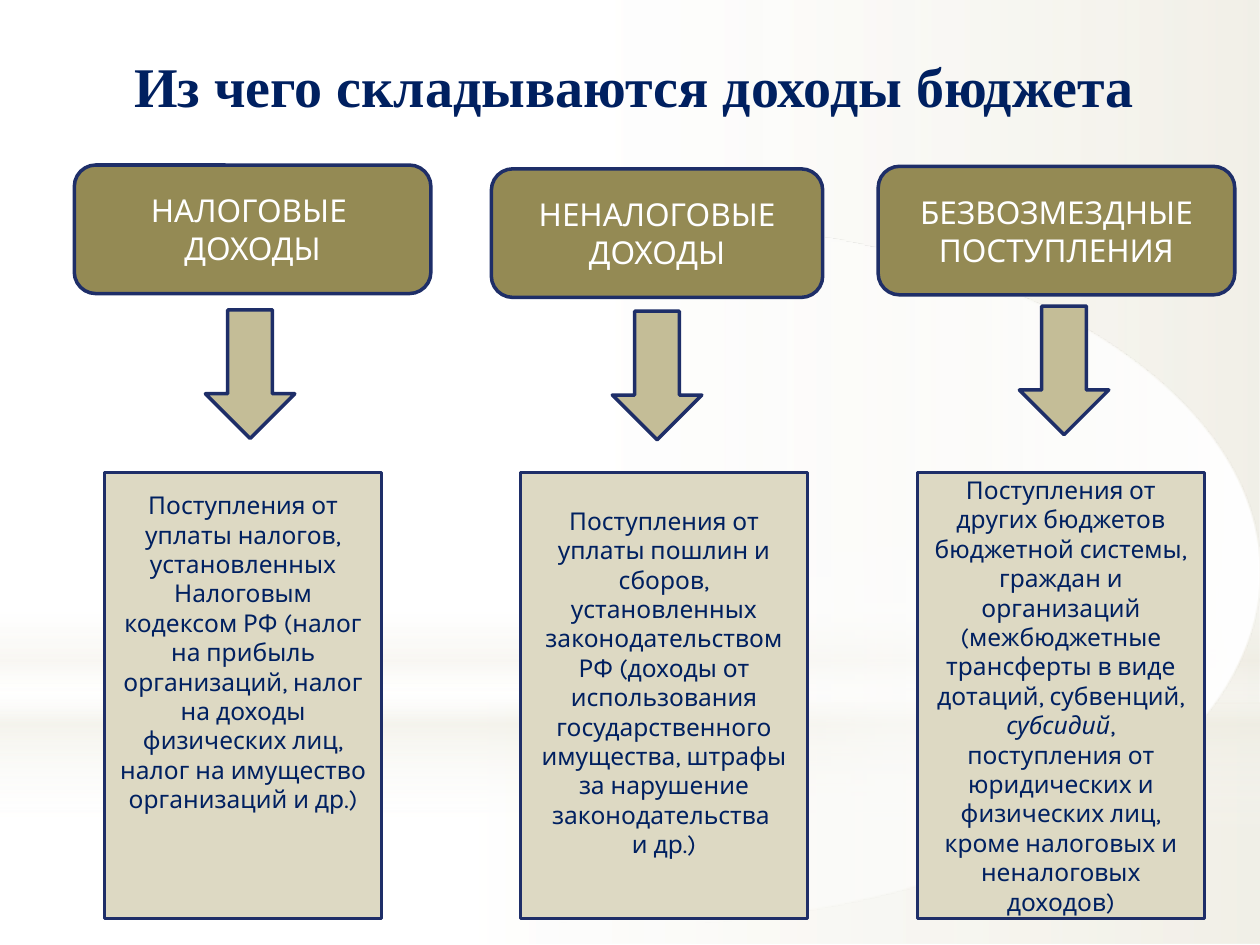
from pptx import Presentation
from pptx.dml.color import RGBColor
from pptx.enum.shapes import MSO_SHAPE
from pptx.enum.text import MSO_ANCHOR, PP_ALIGN
from pptx.oxml import parse_xml
from pptx.oxml.ns import nsdecls
from pptx.util import Inches, Pt

RECT, ROUND = MSO_SHAPE.RECTANGLE, MSO_SHAPE.ROUNDED_RECTANGLE
ARROW, OVAL = MSO_SHAPE.DOWN_ARROW, MSO_SHAPE.OVAL
CENTER, RIGHT, MIDDLE = PP_ALIGN.CENTER, PP_ALIGN.RIGHT, MSO_ANCHOR.MIDDLE

WHITE = RGBColor(0xFF, 0xFF, 0xFF)
CREAM = RGBColor(0xEE, 0xEC, 0xE1)
NAVY = RGBColor(0x00, 0x20, 0x60)
OUTLINE = RGBColor(0x1E, 0x2E, 0x68)
OLIVE = RGBColor(0x94, 0x8A, 0x54)
TAN = RGBColor(0xC4, 0xBD, 0x97)
SAND = RGBColor(0xDD, 0xD9, 0xC3)

prs = Presentation()
prs.slide_width, prs.slide_height = Inches(10), Inches(7.5)
s = prs.slides.add_slide(prs.slide_layouts[6])


def add_box(kind, x, y, w, h, fill):
    sp = s.shapes.add_shape(kind, Inches(x), Inches(y), Inches(w), Inches(h))
    sp.shadow.inherit = False
    sp.fill.solid()
    sp.fill.fore_color.rgb = fill
    sp.line.color.rgb = OUTLINE
    sp.line.width = Pt(2)
    return sp


def add_text(tf, paragraphs, size, color, font, align=CENTER, bold=None):
    """Each paragraph is a list of (text, italic) runs."""
    tf.word_wrap = True
    for i, runs in enumerate(paragraphs):
        p = tf.paragraphs[0] if i == 0 else tf.add_paragraph()
        p.alignment = align
        for text, italic in runs:
            r = p.add_run()
            r.text = text
            r.font.name, r.font.size = font, Pt(size)
            r.font.bold, r.font.italic = bold, italic
            r.font.color.rgb = color


# Background: gradient stops are (position %, colour, opacity %)
backdrop = [
    (RECT, 5.58, 1.91, 0, [(0, WHITE, 91), (37, WHITE, 76), (100, CREAM, 79)]),
    (RECT, 0, 5.58, 0, [(0, WHITE, 89), (48, WHITE, 62), (100, CREAM, 79)]),
    (RECT, 4.12, 2.5, 90, [(0, WHITE, 0), (29, WHITE, 30), (45, CREAM, 40),
                           (55, WHITE, 26), (65, CREAM, 60), (100, WHITE, 0)]),
    (OVAL, 1.75, 5.58, 180, [(0, WHITE, 100), (56, WHITE, 0)]),
]
for kind, y, h, angle, stops in backdrop:
    sp = s.shapes.add_shape(kind, 0, Inches(y), Inches(10), Inches(h))
    sp.shadow.inherit = False
    sp.line.fill.background()
    gs = "".join(
        f'<a:gs pos="{pos * 1000}"><a:srgbClr val="{color}">'
        f'<a:alpha val="{alpha * 1000}"/></a:srgbClr></a:gs>'
        for pos, color, alpha in stops)
    sp.line._get_or_add_ln().addprevious(parse_xml(
        f'<a:gradFill {nsdecls("a")} rotWithShape="1"><a:gsLst>{gs}</a:gsLst>'
        f'<a:lin ang="{angle * 60000}" scaled="0"/></a:gradFill>'))

# Title
sp = s.shapes.add_textbox(Inches(0.9), Inches(0.36), Inches(8.2), Inches(0.69))
add_text(sp.text_frame, [[("Из чего складываются доходы бюджета", None)]],
         32, NAVY, "Times New Roman", RIGHT, True)

# Columns: header (x, y, w, lines), arrow (x, y),
# description (x, w, bottom inset, paragraphs)
columns = [
    ((0.59, 1.31, 2.83, ["НАЛОГОВЫЕ ", "ДОХОДЫ"]), (1.63, 2.46),
     (0.83, 2.2, 0.74, [[(
         "Поступления от уплаты налогов, установленных Налоговым кодексом РФ "
         "(налог на прибыль организаций, налог на доходы физических лиц, "
         "налог на имущество организаций и др.)", None)]])),
    ((3.9, 1.34, 2.63, ["НЕНАЛОГОВЫЕ ДОХОДЫ"]), (4.86, 2.47),
     (4.13, 2.28, 0.26, [[(
         "Поступления от уплаты пошлин и сборов, установленных "
         "законодательством РФ (доходы от использования государственного "
         "имущества, штрафы за нарушение законодательства ", None)],
         [("и др.)", None)]])),
    ((6.97, 1.32, 2.83, ["БЕЗВОЗМЕЗДНЫЕ ПОСТУПЛЕНИЯ"]), (8.09, 2.43),
     (7.28, 2.28, 0.05, [[
         ("Поступления от других бюджетов бюджетной системы, граждан и "
          "организаций (межбюджетные трансферты в виде дотаций, субвенций, ",
          None),
         ("субсидий", True),
         (", поступления от юридических и физических лиц, кроме налоговых и "
          "неналоговых доходов)", None)]])),
]
for (hx, hy, hw, lines), (ax, ay), (dx, dw, inset, paragraphs) in columns:
    sp = add_box(ROUND, hx, hy, hw, 1.02, OLIVE)
    sp.text_frame.vertical_anchor = MIDDLE
    add_text(sp.text_frame, [[(line, None)] for line in lines],
             18, WHITE, "Karla")

    add_box(ARROW, ax, ay, 0.71, 1.02, TAN)

    sp = add_box(RECT, dx, 3.75, dw, 3.54, SAND)
    sp.text_frame.vertical_anchor = MIDDLE
    sp.text_frame.margin_bottom = Inches(inset)
    add_text(sp.text_frame, paragraphs, 14, NAVY, "Karla")

prs.save("out.pptx")
